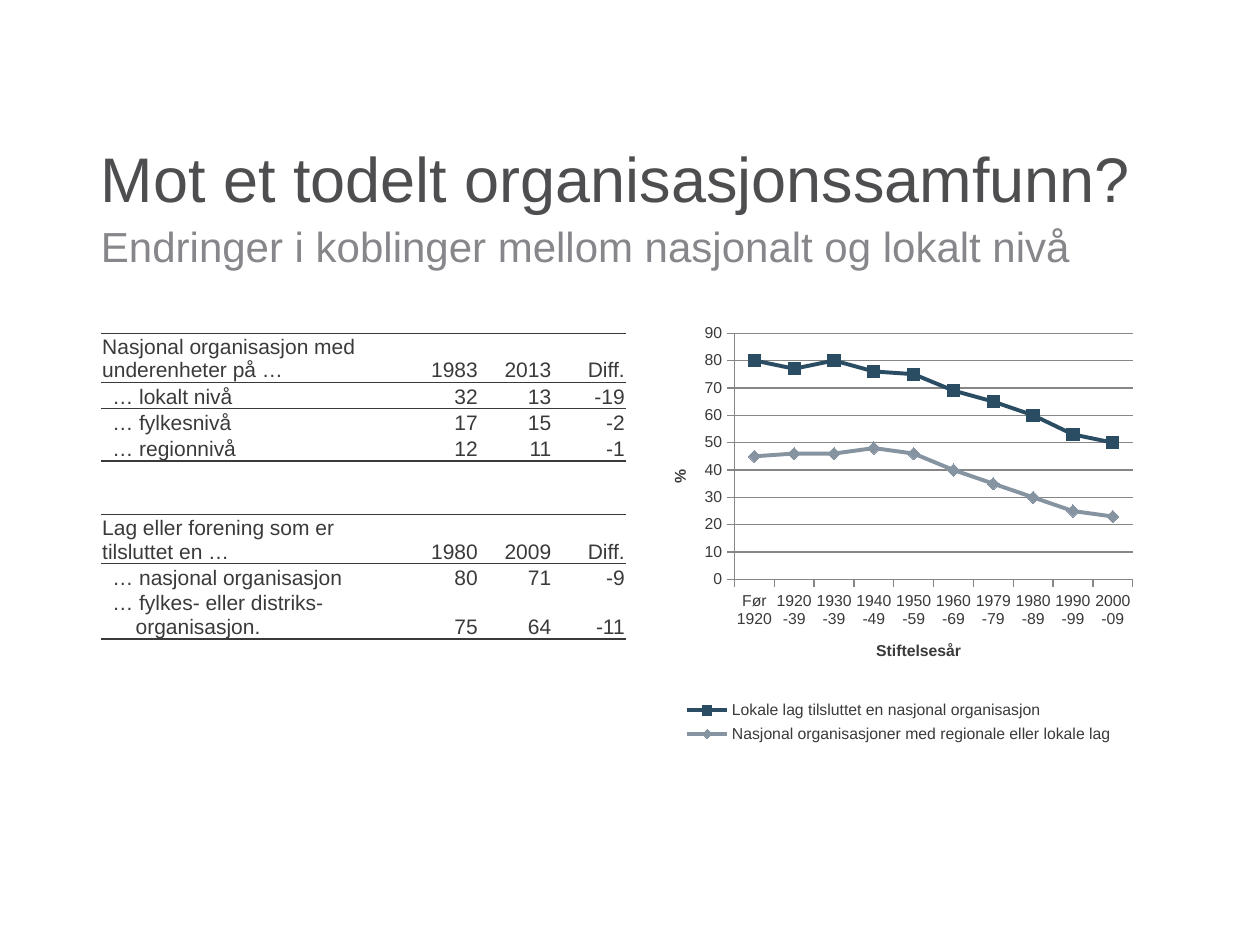
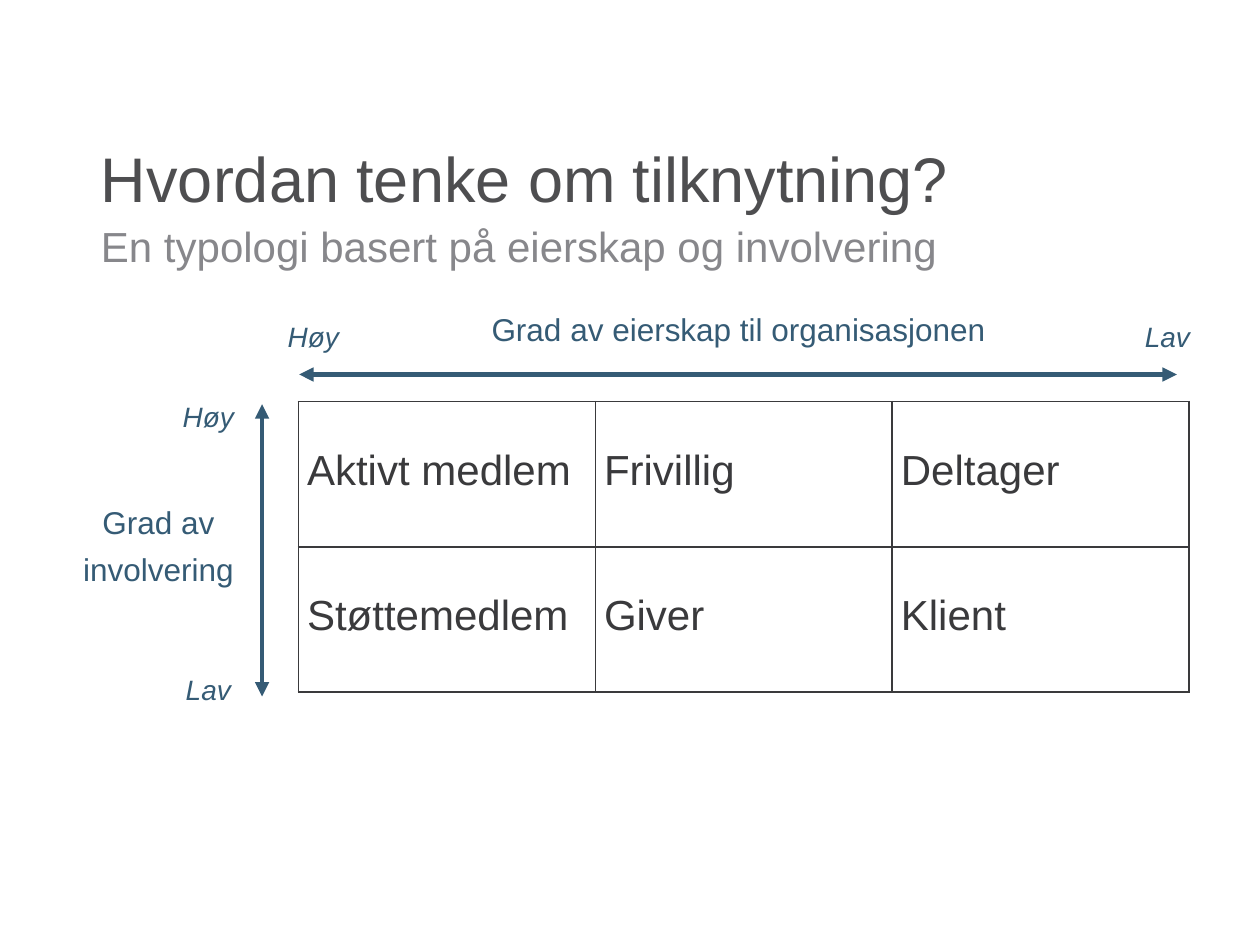
from lxml import etree
from pptx import Presentation
from pptx.chart.data import CategoryChartData
from pptx.dml.color import RGBColor
from pptx.enum.chart import XL_CHART_TYPE as ChartType, XL_LEGEND_POSITION as LegendPosition
from pptx.enum.chart import XL_MARKER_STYLE as Marker, XL_TICK_MARK as TickMark
from pptx.enum.shapes import MSO_CONNECTOR as Connector
from pptx.enum.text import MSO_ANCHOR as Anchor, MSO_AUTO_SIZE as AutoSize, PP_ALIGN as Align
from pptx.oxml import parse_xml
from pptx.oxml.ns import nsdecls, qn
from pptx.util import Pt

FONT = "Arial"
INK = "3A3A3C"
TITLE_COLOR = "4E4E50"
SUBTITLE_COLOR = "87878B"
ACCENT = "355B75"
GRID = "868686"
NO_GRID_STYLE = "{2D5ABB26-0587-4C30-8999-92F81FD0307C}"

color = RGBColor.from_string


def write(paragraph, text, size, hex_color=INK, italic=False):
    """Append text as runs, with a line break at each newline."""
    for number, line in enumerate(text.split("\n")):
        if number:
            paragraph.add_line_break()
        run = paragraph.add_run()
        run.text = line
        run.font.name = FONT
        run.font.size = Pt(size)
        run.font.italic = italic
        run.font.color.rgb = color(hex_color)


def style_cell(cell, margins, sides):
    """Clear the fill, set margins (left, top, right, bottom), rule the sides given in L, R, T, B order."""
    cell.margin_left, cell.margin_top, cell.margin_right, cell.margin_bottom = map(Pt, margins)
    cell.fill.background()
    properties = cell._tc.tcPr
    for position, side in enumerate(sides):
        properties.insert(position, parse_xml(
            f'<a:ln{side} {nsdecls("a")} w="12700"><a:solidFill><a:srgbClr val="{INK}"/>'
            f'</a:solidFill></a:ln{side}>'))


presentation = Presentation()
presentation.slide_width, presentation.slide_height = Pt(720), Pt(540)

titles = [
    ("Mot et todelt organisasjonssamfunn?", "Endringer i koblinger mellom nasjonalt og lokalt nivå"),
    ("Hvordan tenke om tilknytning?", "En typologi basert på eierskap og involvering"),
]
slides = []
for heading, subtitle in titles:
    slide = presentation.slides.add_slide(presentation.slide_layouts[5])
    title = slide.shapes.title
    title.left, title.top, title.width, title.height = Pt(50.5), Pt(70), Pt(615), Pt(90)
    frame = title.text_frame
    frame.auto_size = AutoSize.NONE
    frame.vertical_anchor = Anchor.MIDDLE
    paragraph = frame.paragraphs[0]
    paragraph.alignment = Align.LEFT
    paragraph.line_spacing = 1.1
    write(paragraph, heading, 36, TITLE_COLOR)
    paragraph.add_line_break()
    write(paragraph, subtitle, 24, SUBTITLE_COLOR)
    slides.append(slide)
links_slide, typology_slide = slides

# Links between national and local level: table
level_rows = [
    ("Nasjonal organisasjon med\nunderenheter på …", "1983", "2013", "Diff."),
    ("… lokalt nivå", "32", "13", "-19"),
    ("… fylkesnivå", "17", "15", "-2"),
    ("… regionnivå", "12", "11", "-1"),
    ("",) * 4,
    ("",) * 4,
    ("Lag eller forening som er\ntilsluttet en …", "1980", "2009", "Diff."),
    ("… nasjonal organisasjon", "80", "71", "-9"),
    ("… fylkes- eller distriks-", "75", "64", "-11"),
]
header_rows, tall_rows = (0, 6), (0, 6, 8)
ruled_below = (0, 1, 3, 5, 6, 8)
level_table = links_slide.shapes.add_table(9, 4, Pt(57.75), Pt(190.5), Pt(300), Pt(174)).table
typology_table = typology_slide.shapes.add_table(2, 3, Pt(170.5), Pt(229.5), Pt(509), Pt(166)).table
for table in (level_table, typology_table):
    table.first_row = table.horz_banding = False
    table._tbl.tblPr.find(qn("a:tableStyleId")).text = NO_GRID_STYLE

for column, width in zip(level_table.columns, (175, 41, 42, 42)):
    column.width = Pt(width)
for row_index, texts in enumerate(level_rows):
    level_table.rows[row_index].height = Pt(28 if row_index in tall_rows else 15)
    for column_index, text in enumerate(texts):
        cell = level_table.cell(row_index, column_index)
        indented = column_index == 0 and row_index not in header_rows
        sides = ["T"] if row_index in header_rows else []
        if row_index in ruled_below:
            sides.append("B")
        style_cell(cell, (6.5 if indented else 0.7, 0.7, 0.7, 0), sides)
        cell.vertical_anchor = Anchor.BOTTOM
        paragraph = cell.text_frame.paragraphs[0]
        if column_index:
            paragraph.alignment = Align.RIGHT
        if text:
            write(paragraph, text, 12)
        else:
            paragraph._p.get_or_add_endParaRPr().set("sz", "1200")
continuation = level_table.cell(8, 0).text_frame.add_paragraph()
continuation._p.get_or_add_pPr().set("marL", str(Pt(13.3)))
write(continuation, "organisasjon.", 12)

# Links between national and local level: chart
chart_data = CategoryChartData(number_format="0")
chart_data.categories = ["Før 1920", "1920-39", "1930-39", "1940-49", "1950-59",
                         "1960-69", "1979-79", "1980-89", "1990-99", "2000-09"]
chart_data.add_series("Lokale lag tilsluttet en nasjonal organisasjon",
                      (80, 77, 80, 76, 75, 69, 65, 60, 53, 50))
chart_data.add_series("Nasjonal organisasjoner med regionale eller lokale lag",
                      (45, 46, 46, 48, 46, 40, 35, 30, 25, 23))
chart = links_slide.shapes.add_chart(
    ChartType.LINE_MARKERS, Pt(368.5), Pt(180.5), Pt(284.5), Pt(247), chart_data).chart
chart.has_title = False
chart.font.name = FONT
chart.font.size = Pt(9)
chart.font.color.rgb = color(INK)
chart.plots[0].vary_by_categories = False

series_styles = [("2B4D63", Marker.SQUARE), ("8693A0", Marker.DIAMOND)]
for series, (series_color, marker_style) in zip(chart.plots[0].series, series_styles):
    series.smooth = False
    series.format.line.width = Pt(2.25)
    series.format.line.color.rgb = color(series_color)
    series.marker.style = marker_style
    series.marker.size = 7
    series.marker.format.fill.solid()
    series.marker.format.fill.fore_color.rgb = color(series_color)
    series.marker.format.line.color.rgb = color(series_color)

for axis, axis_title in ((chart.category_axis, "Stiftelsesår"), (chart.value_axis, "%")):
    axis.major_tick_mark = TickMark.OUTSIDE
    axis.minor_tick_mark = TickMark.NONE
    axis.format.line.color.rgb = color(GRID)
    paragraph = axis.axis_title.text_frame.paragraphs[0]
    write(paragraph, axis_title, 9)
    paragraph.runs[0].font.bold = True
value_axis = chart.value_axis
value_axis.minimum_scale, value_axis.maximum_scale, value_axis.major_unit = 0, 90, 10
value_axis.major_gridlines.format.line.color.rgb = color(GRID)
chart.has_legend = True
chart.legend.position = LegendPosition.BOTTOM
chart.legend.include_in_layout = False

chart_space = chart._chartSpace
layouts = [
    ("plotArea", 0, '<c:layoutTarget val="inner"/>', (0.18, 0.04, 0.8, 0.57)),
    ("legend", 1, "", (0.06, 0.88, 0.9, 0.12)),
]
for part_name, position, target, fractions in layouts:
    part = next(chart_space.iter(qn(f"c:{part_name}")))
    for old_layout in part.findall(qn("c:layout")):
        part.remove(old_layout)
    values = "".join(f'<c:{key} val="{value}"/>' for key, value in zip("xywh", fractions))
    part.insert(position, parse_xml(
        f'<c:layout {nsdecls("c")}><c:manualLayout>{target}<c:xMode val="edge"/>'
        f'<c:yMode val="edge"/>{values}</c:manualLayout></c:layout>'))

# Typology: ownership across, involvement down
member_types = [("Aktivt medlem", "Frivillig", "Deltager"), ("Støttemedlem", "Giver", "Klient")]
for row_index, texts in enumerate(member_types):
    typology_table.rows[row_index].height = Pt(83)
    for column_index, text in enumerate(texts):
        cell = typology_table.cell(row_index, column_index)
        style_cell(cell, (5, 26, 5, 0), "LRTB")
        write(cell.text_frame.paragraphs[0], text, 24)

for start_x, start_y, end_x, end_y in ((171, 214, 672.5, 214), (149.75, 231, 149.75, 398)):
    arrow = typology_slide.shapes.add_connector(
        Connector.STRAIGHT, Pt(start_x), Pt(start_y), Pt(end_x), Pt(end_y))
    arrow.line.color.rgb = color(ACCENT)
    arrow.line.width = Pt(2.75)
    line = arrow.line._get_or_add_ln()
    for end in ("headEnd", "tailEnd"):
        etree.SubElement(line, qn(f"a:{end}"), type="triangle")
    etree.SubElement(arrow._element.spPr, qn("a:effectLst"))

axis_labels = [
    (["Grad av eierskap til organisasjonen"], 252, 171.5, 340, 30, 18),
    (["Grad av", "involvering"], 29.5, 282, 122, 56, 18),
    (["Høy"], 155, 177, 48, 27, 16),
    (["Lav"], 643, 177, 48, 27, 16),
    (["Høy"], 95, 223, 48, 27, 16),
    (["Lav"], 95, 379, 48, 27, 16),
]
for lines, left, top, width, height, size in axis_labels:
    frame = typology_slide.shapes.add_textbox(Pt(left), Pt(top), Pt(width), Pt(height)).text_frame
    frame.word_wrap = True
    for line_index, text in enumerate(lines):
        paragraph = frame.add_paragraph() if line_index else frame.paragraphs[0]
        paragraph.alignment = Align.CENTER
        paragraph.line_spacing = 1.1
        if line_index:
            paragraph.space_before = Pt(3)
        write(paragraph, text, size, ACCENT, italic=size == 16)

presentation.save("out.pptx")
